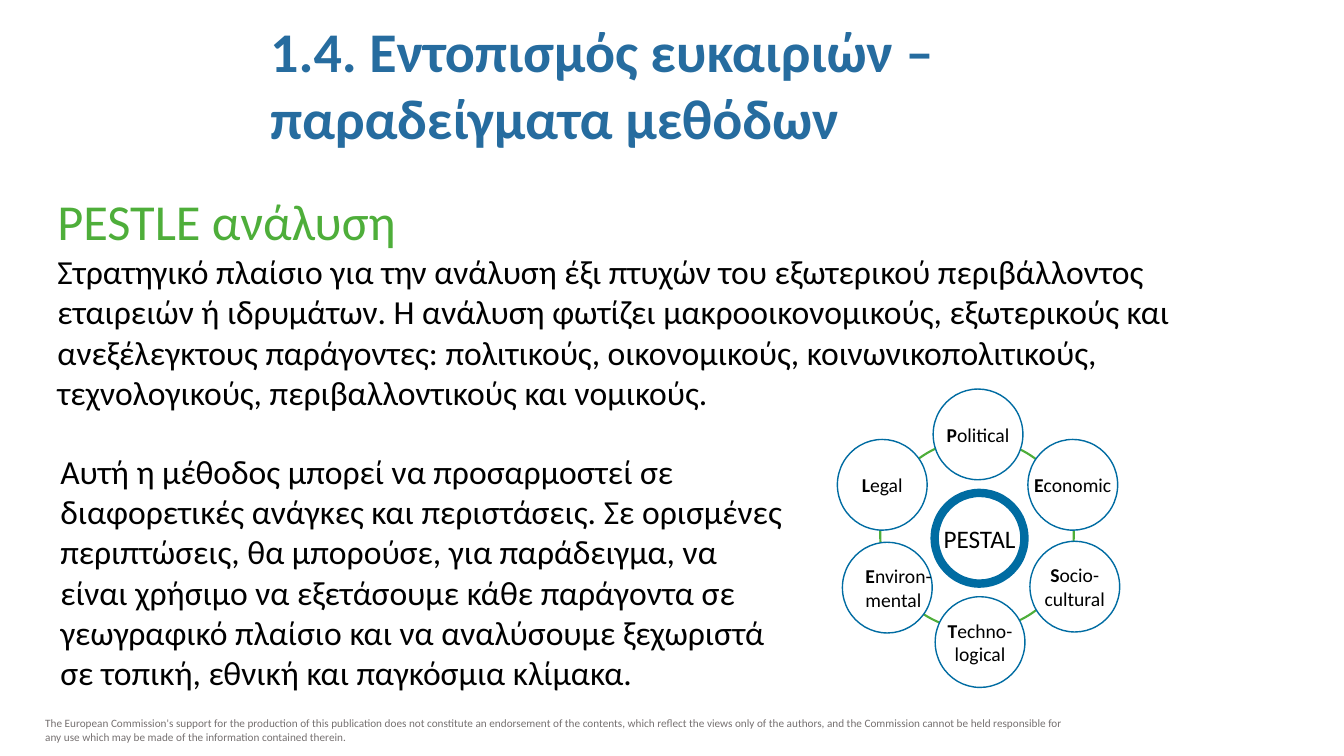
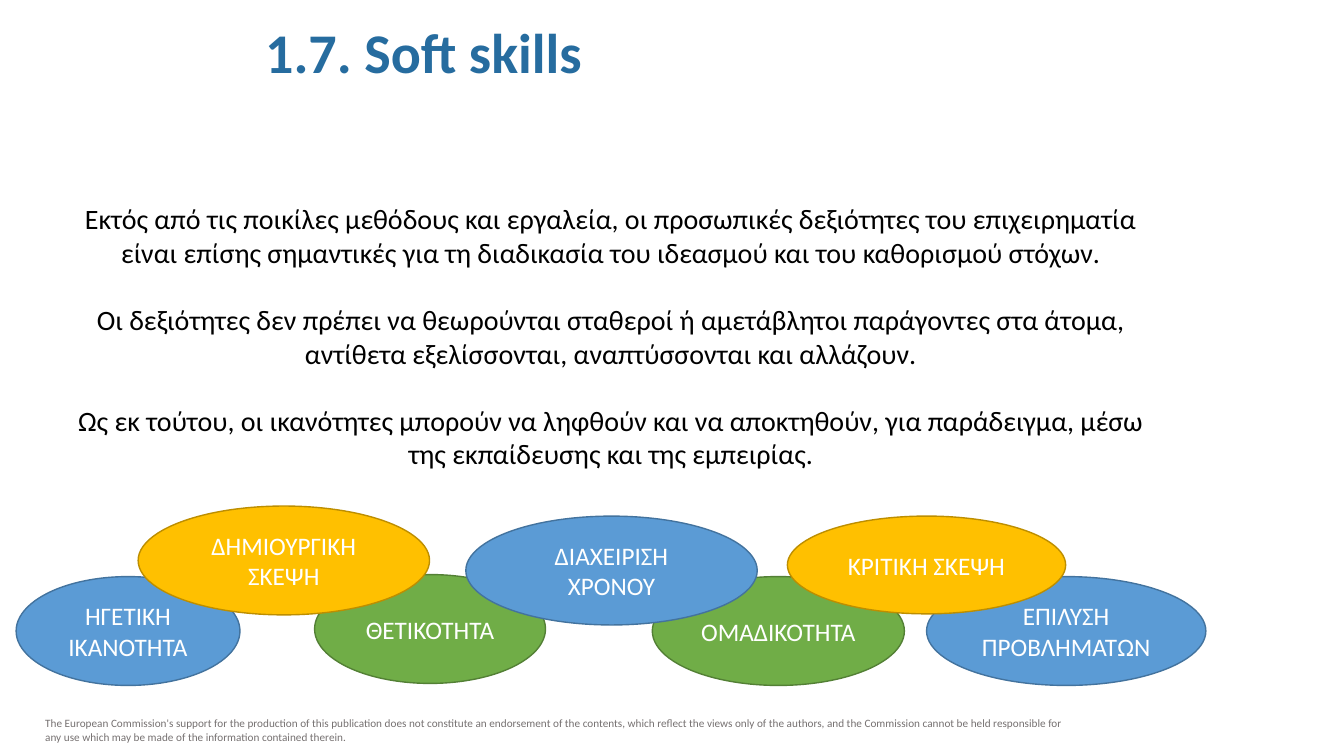
import pptx
import pptx.util
import pptx.oxml.ns
from lxml import etree
from pptx.dml.color import RGBColor
from pptx.enum.shapes import MSO_SHAPE
from pptx.enum.text import MSO_ANCHOR, MSO_AUTO_SIZE, PP_ALIGN

FONT = "Calibri"
BLACK, WHITE = RGBColor(0, 0, 0), RGBColor(255, 255, 255)
GREY = RGBColor(0x76, 0x71, 0x71)
TITLE_BLUE = RGBColor(0x26, 0x6C, 0x9F)
RING_BLUE = RGBColor(0x00, 0x6C, 0xA2)
LEAF = RGBColor(0x4E, 0xAE, 0x3A)

# Fill and outline of the skill ovals
BLUE = RGBColor(0x5B, 0x9B, 0xD5), RGBColor(0x43, 0x73, 0x9E)
GREEN = RGBColor(0x70, 0xAD, 0x47), RGBColor(0x53, 0x80, 0x35)
GOLD = RGBColor(0xFF, 0xC0, 0x00), RGBColor(0xBD, 0x8E, 0x00)

# Content
FOOTER = (
    "The European Commission's support for the production of this publication does not "
    "constitute an endorsement of the contents, which reflect the views only of the authors, "
    "and the Commission cannot be held responsible for any use which may be made of the "
    "information contained therein."
)
PESTLE_TITLE = "1.4. Εντοπισμός ευκαιριών – παραδείγματα μεθόδων"
PESTLE_HEADING = "PESTLE ανάλυση"
PESTLE_INTRO = (
    "Στρατηγικό πλαίσιο για την ανάλυση έξι πτυχών του εξωτερικού περιβάλλοντος εταιρειών ή "
    "ιδρυμάτων. Η ανάλυση φωτίζει μακροοικονομικούς, εξωτερικούς και ανεξέλεγκτους παράγοντες: "
    "πολιτικούς, οικονομικούς, κοινωνικοπολιτικούς, τεχνολογικούς, περιβαλλοντικούς και νομικούς."
)
PESTLE_USE = (
    "Αυτή η μέθοδος μπορεί να προσαρμοστεί σε διαφορετικές ανάγκες και περιστάσεις. Σε "
    "ορισμένες περιπτώσεις, θα μπορούσε, για παράδειγμα, να είναι χρήσιμο να εξετάσουμε κάθε "
    "παράγοντα σε γεωγραφικό πλαίσιο και να αναλύσουμε ξεχωριστά σε τοπική, εθνική και "
    "παγκόσμια κλίμακα."
)
# Label, centre of the circle, alignment
FACTORS = [
    ("Economic", 10.64, 4.81, PP_ALIGN.CENTER),
    ("Legal", 8.75, 4.81, PP_ALIGN.CENTER),
    ("Environ-\nmental", 8.8, 5.83, PP_ALIGN.LEFT),
    ("Techno-\nlogical", 9.72, 6.37, PP_ALIGN.CENTER),
    ("Political", 9.7, 4.31, PP_ALIGN.CENTER),
    ("Socio-\ncultural", 10.66, 5.82, PP_ALIGN.CENTER),
]
FACTOR_SIZE = 0.89, 0.9

SKILLS_TITLE = "1.7. Soft skills"
SKILLS_TEXT = [
    "Εκτός από τις ποικίλες μεθόδους και εργαλεία, οι προσωπικές δεξιότητες του επιχειρηματία "
    "είναι επίσης σημαντικές για τη διαδικασία του ιδεασμού και του καθορισμού στόχων.",
    "Οι δεξιότητες δεν πρέπει να θεωρούνται σταθεροί ή αμετάβλητοι παράγοντες στα άτομα, "
    "αντίθετα εξελίσσονται, αναπτύσσονται και αλλάζουν.",
    "Ως εκ τούτου, οι ικανότητες μπορούν να ληφθούν και να αποκτηθούν, για παράδειγμα, μέσω "
    "της εκπαίδευσης και της εμπειρίας.",
]
# Label, colours, left, top, width, height; back to front
SKILLS = [
    ("ΘΕΤΙΚΟΤΗΤΑ", GREEN, 3.12, 5.7, 2.29, 1.08),
    ("ΗΓΕΤΙΚΗ ΙΚΑΝΟΤΗΤΑ", BLUE, 0.16, 5.72, 2.22, 1.08),
    ("ΔΗΜΙΟΥΡΓΙΚΗ ΣΚΕΨΗ", GOLD, 1.37, 5.02, 2.89, 1.08),
    ("ΟΜΑΔΙΚΟΤΗΤΑ", GREEN, 6.47, 5.72, 2.5, 1.08),
    ("ΔΙΑΧΕΙΡΙΣΗ ΧΡΟΝΟΥ", BLUE, 4.62, 5.12, 2.89, 1.08),
    ("ΕΠΙΛΥΣΗ ΠΡΟΒΛΗΜΑΤΩΝ", BLUE, 9.19, 5.72, 2.77, 1.08),
    ("ΚΡΙΤΙΚΗ ΣΚΕΨΗ", GOLD, 7.81, 5.12, 2.76, 0.97),
]


def inches(*lengths):
    return [pptx.util.Inches(length) for length in lengths]


def write(shape, *texts, size=18, color=BLACK, bold=False, align=PP_ALIGN.LEFT,
          anchor=MSO_ANCHOR.TOP, gap=0, wrap=True, bold_initial=False):
    """Fill a shape with one paragraph per text; a newline is a line break."""
    frame = shape.text_frame
    frame.word_wrap = wrap
    frame.auto_size = MSO_AUTO_SIZE.NONE
    frame.vertical_anchor = anchor
    for index, text in enumerate(texts):
        para = frame.paragraphs[0] if index == 0 else frame.add_paragraph()
        properties = para._p.get_or_add_pPr()
        properties.set("marL", "0")
        properties.set("indent", "0")
        para.alignment = align
        para.space_before = pptx.util.Pt(gap if index else 0)
        etree.SubElement(properties, pptx.oxml.ns.qn("a:buNone"))
        pieces = [(text[:1], True), (text[1:], bold)] if bold_initial else [(text, bold)]
        for piece, heavy in pieces:
            for number, line in enumerate(piece.split("\n")):
                if number:
                    para.add_line_break()
                span = para.add_run()
                span.text = line
                span.font.name = FONT
                span.font.size = pptx.util.Pt(size)
                span.font.bold = heavy
                span.font.color.rgb = color


def place(shape, *area):
    shape.left, shape.top, shape.width, shape.height = inches(*area)
    return shape


def add_text(page, area, *texts, **style):
    box = page.shapes.add_textbox(*inches(*area))
    write(box, *texts, **style)
    return box


def add_oval(page, area, fill, line, weight=1):
    oval = page.shapes.add_shape(MSO_SHAPE.OVAL, *inches(*area))
    oval.shadow.inherit = False
    oval.fill.solid()
    oval.fill.fore_color.rgb = fill
    oval.line.color.rgb = line
    oval.line.width = pptx.util.Pt(weight)
    return oval


def add_label(oval, text, **style):
    write(oval, text, anchor=MSO_ANCHOR.MIDDLE, **style)


def add_page(deck, title, title_area, texts, body_area, **body_style):
    page = deck.slides.add_slide(deck.slide_layouts[1])
    write(place(page.shapes.title, *title_area), title, size=40, color=TITLE_BLUE, bold=True)
    write(place(page.placeholders[1], *body_area), *texts, **body_style)
    return page


def add_pestle(deck):
    page = add_page(deck, PESTLE_TITLE, (2.58, 0.11, 8.17, 1.45),
                    [PESTLE_INTRO], (0.47, 2.44, 11.32, 1.72), size=24)
    add_text(page, (0.47, 1.84, 4.23, 0.71), PESTLE_HEADING, size=36, color=LEAF)
    add_text(page, (0.5, 4.42, 7.36, 2.52), PESTLE_USE, size=24)

    # Ring of factors around the hub
    add_oval(page, (8.73, 4.36, 1.92, 1.89), WHITE, LEAF, weight=1.5)
    width, height = FACTOR_SIZE
    for label, x, y, align in FACTORS:
        circle = add_oval(page, (x - width / 2, y - height / 2, width, height), WHITE, RING_BLUE)
        add_label(circle, label, size=14, align=align, wrap=False, bold_initial=True)
    hub = add_oval(page, (9.27, 4.89, width, height), WHITE, RING_BLUE, weight=6)
    add_label(hub, "PESTAL", align=PP_ALIGN.CENTER, wrap=False)
    return page


def add_skills(deck):
    page = add_page(deck, SKILLS_TITLE, (2.53, 0.12, 8.38, 0.77),
                    SKILLS_TEXT, (0.6, 1.95, 10.92, 2.79),
                    size=20, align=PP_ALIGN.CENTER, gap=24)
    for label, (fill, line), *area in SKILLS:
        add_label(add_oval(page, area, fill, line), label, color=WHITE, align=PP_ALIGN.CENTER)


def main():
    deck = pptx.Presentation()
    deck.slide_width, deck.slide_height = inches(13.33, 7.5)
    page = add_pestle(deck)
    add_skills(deck)

    # The shared footer belongs to the layout
    footer = add_text(page, (0.35, 7.06, 10.46, 0.37), FOOTER, size=8, color=GREY)
    page.slide_layout.shapes.element.append(footer.element)
    deck.save("out.pptx")


if __name__ == "__main__":
    main()
